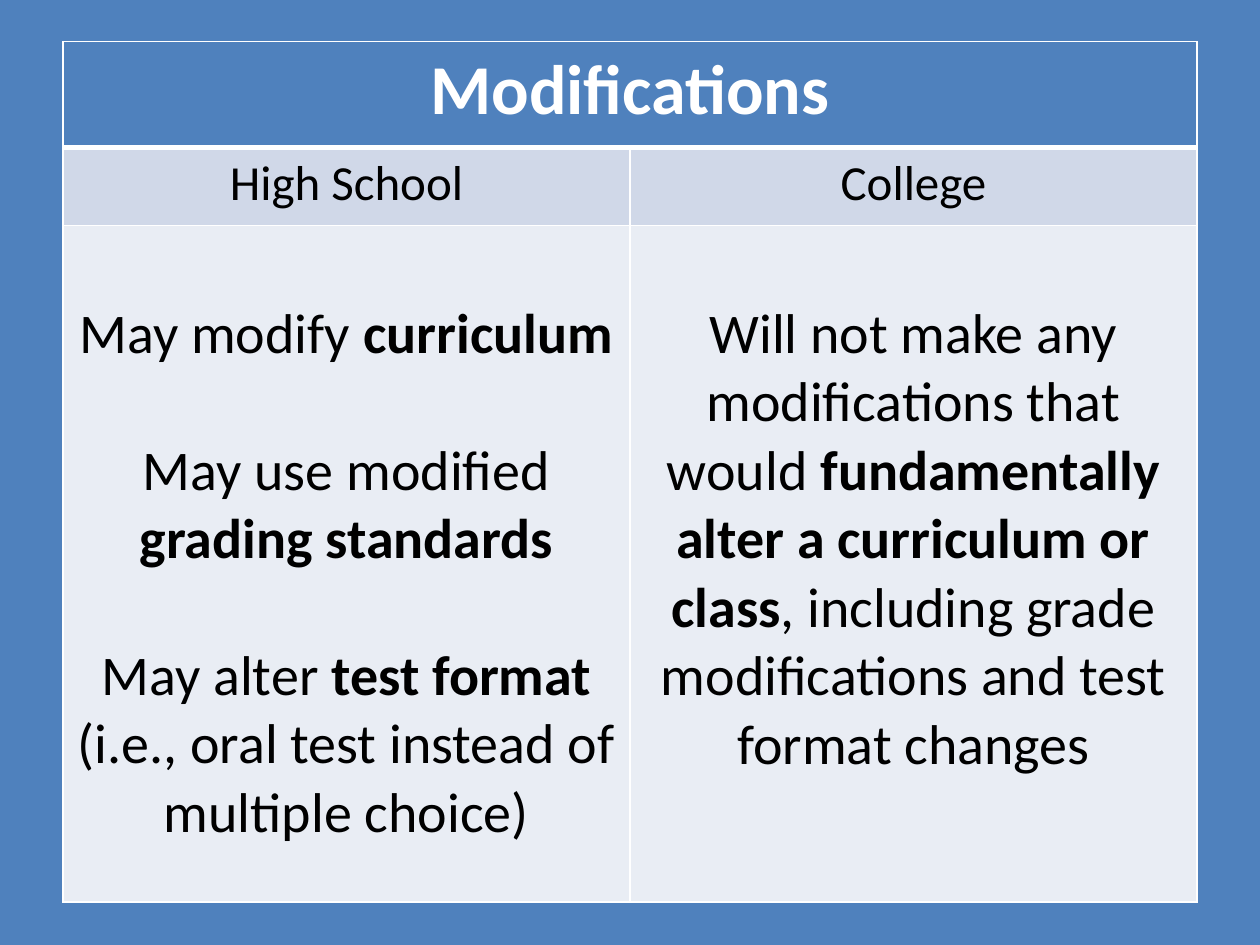
from lxml.etree import SubElement
from pptx import Presentation
from pptx.dml.color import RGBColor as RGB
from pptx.enum.text import PP_ALIGN as Align
from pptx.oxml.ns import qn
from pptx.util import Inches, Pt

BLUE, WHITE, BLACK = "4F81BD", "FFFFFF", "000000"
HEAD, BODY = "D0D8E8", "E9EDF4"
GAP = 39  # one line of 32 pt text

# Each paragraph is a list of (text, bold) runs.
SCHOOL = [
    [("May modify ", False), ("curriculum", True)],
    [("May use modified ", False), ("grading standards", True)],
    [("May alter ", False), ("test format ", True),
     ("(i.e., oral test instead of multiple choice)", False)],
]
COLLEGE = [
    [("Will not make any modifications that would ", False),
     ("fundamentally alter a curriculum or class", True),
     (", including grade modifications and test format changes", False)],
]


def color(code):
    return RGB.from_string(code)


def paint(fill, code):
    fill.solid()
    fill.fore_color.rgb = color(code)


def border(cell, **widths):
    """Draw white edges of 1 pt, or of the width given for L, R, T or B."""
    props = cell._tc.get_or_add_tcPr()
    for side in "LRTB":
        line = SubElement(props, qn(f"a:ln{side}"), w=str(Pt(widths.get(side, 1))))
        fill = SubElement(line, qn("a:solidFill"))
        SubElement(fill, qn("a:srgbClr"), val=WHITE)


def write(cell, paras, size, ink=BLACK):
    frame = cell.text_frame
    for i, parts in enumerate(paras):
        para = frame.add_paragraph() if i else frame.paragraphs[0]
        para.alignment = Align.CENTER
        if i:
            para.space_before = Pt(GAP)
        for text, bold in parts:
            run = para.add_run()
            run.text = text
            font = run.font
            font.name, font.size, font.bold = "Calibri", Pt(size), bold
            font.color.rgb = color(ink)


def add_grid(slide):
    grid = slide.shapes.add_table(
        3, 2, Inches(0.5), Inches(0.33), Inches(9), Inches(6.83)).table
    for row, high in zip(grid.rows, (0.84, 0.62, 5.37)):
        row.height = Inches(high)
    edges = ({"B": 3}, {"T": 3}, {})
    for row, edge, tint in zip(grid.rows, edges, (BLUE, HEAD, BODY)):
        for cell in row.cells:
            border(cell, **edge)
            paint(cell.fill, tint)
    grid.cell(0, 0).merge(grid.cell(0, 1))
    return grid


def main():
    deck = Presentation()
    deck.slide_width, deck.slide_height = Inches(10), Inches(7.5)
    slide = deck.slides.add_slide(deck.slide_layouts[6])
    paint(slide.background.fill, BLUE)

    grid = add_grid(slide)
    write(grid.cell(0, 0), [[("Modifications", True)]], 40, WHITE)
    columns = (("High School", SCHOOL), ("College", COLLEGE))
    for col, (name, paras) in enumerate(columns):
        write(grid.cell(1, col), [[(name, False)]], 28)
        cell = grid.cell(2, col)
        cell.margin_top = Inches(0.05) + Pt(GAP)
        write(cell, paras, 32)
    deck.save("out.pptx")


if __name__ == "__main__":
    main()
